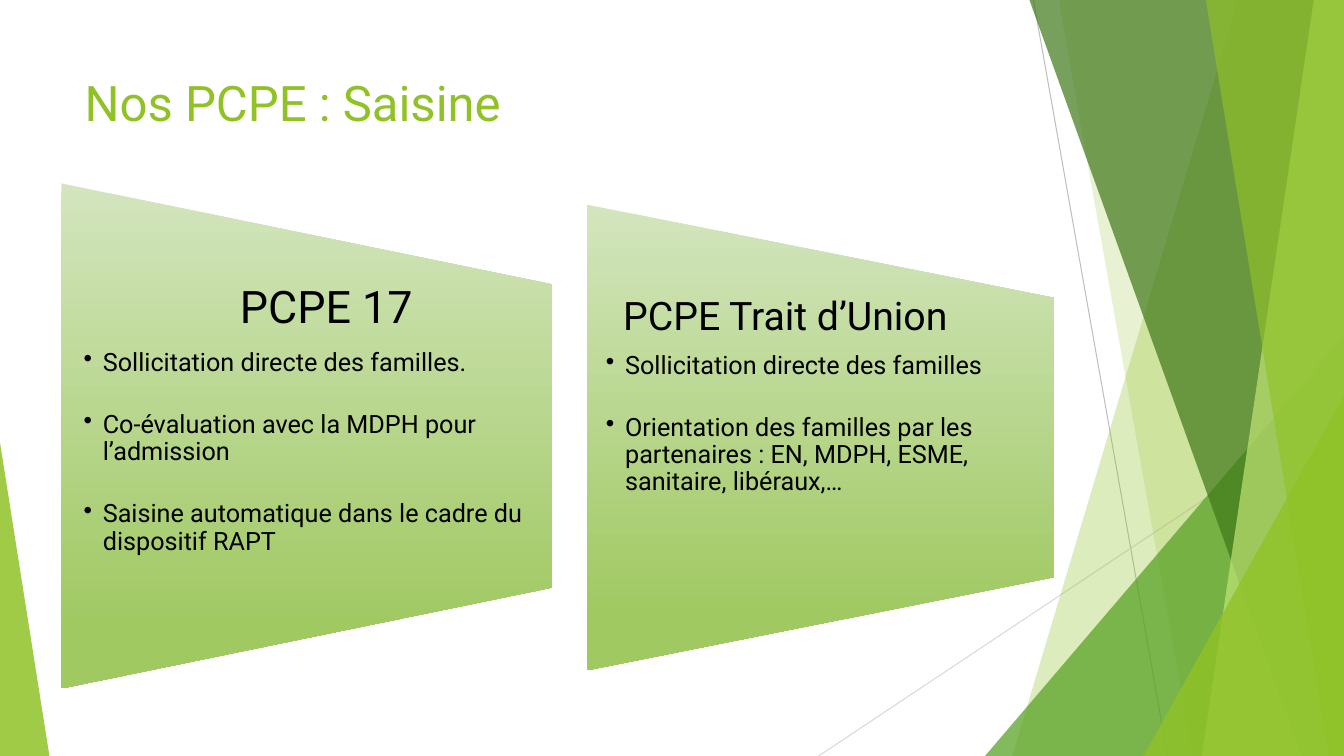
from lxml.etree import SubElement
from pptx import Presentation
from pptx.dml.color import RGBColor
from pptx.enum.shapes import MSO_CONNECTOR, MSO_SHAPE
from pptx.enum.text import MSO_ANCHOR, PP_ALIGN
from pptx.oxml.ns import qn
from pptx.util import Inches, Pt

FONT = "Roboto"
GREEN = "90C226"
WIDTH, HEIGHT = 13.33, 7.5
TITLE = "Nos PCPE : Saisine"

# Panels: place (left, top, width, height), text place, heading and bullets
PANELS = [
    {"panel": (0.61, 1.82, 4.87, 5.01), "text": (0.61, 2.83, 4.87, 3.01),
     "inset": 0.22, "heading": "PCPE 17", "size": 32, "indent": 1.55,
     "bullets": ["Sollicitation directe des familles.",
                 "Co-évaluation avec la MDPH pour l’admission",
                 "Saisine automatique dans le cadre du dispositif RAPT"]},
    {"panel": (5.82, 2.03, 4.63, 4.62), "text": (5.82, 2.94, 4.63, 2.77),
     "inset": 0.19, "heading": "PCPE Trait d’Union", "size": 28, "indent": 0.17,
     "bullets": ["Sollicitation directe des familles",
                 "Orientation des familles par les partenaires : EN, MDPH, "
                 "ESME, sanitaire, libéraux,…"]},
]
GRADIENT = [(0, "D3E5BE"), (88, "A0C962")]

# Decoration: lines, then facets from back to front
LINES = [((10.25, 0), (11.58, HEIGHT), "BFBFBF"),
         ((WIDTH, 4.03), (8.12, HEIGHT), "D9D9D9")]
# A band runs from its top x to its bottom x and fills to the right edge;
# a triangle has a place and the position of its apex.
FACETS = [
    ("band", (12.28, 10.04), GREEN, 30),
    ("band", (10.5, 11.83), GREEN, 20),
    ("triangle", (9.77, 3.33, 3.56, 4.17, 1), "54A021", 72),
    ("band", (10.21, 12.91), "3F7819", 70),
    ("band", (13.03, 11.92), "C0E474", 70),
    ("band", (11.96, 13.18), GREEN, 65),
    ("triangle", (11.34, 3.93, 1.99, 3.57, 1), GREEN, 80),
    ("triangle", (0, 4.39, 0.49, 3.11, 0), GREEN, 85),
]


def rgb(value):
    return RGBColor.from_string(value)


def inches(values):
    return [Inches(value) for value in values]


def apply(target, values):
    for name, value in values.items():
        setattr(target, name, value)


def plain(shape):
    shape.shadow.inherit = False
    shape.line.fill.background()


def add_line(page, start, end, color):
    line = page.shapes.add_connector(
        MSO_CONNECTOR.STRAIGHT, *inches(start + end))
    line.line.color.rgb = rgb(color)
    line.line.width = Pt(0.75)
    SubElement(line._element.spPr, qn("a:effectLst"))


def add_facet(page, kind, geometry, color, opacity):
    if kind == "band":
        top, bottom = geometry
        builder = page.shapes.build_freeform(Inches(top), 0)
        corners = [(WIDTH, 0), (WIDTH, HEIGHT), (bottom, HEIGHT)]
        builder.add_line_segments([inches(corner) for corner in corners])
        facet = builder.convert_to_shape()
    else:
        *place, apex = geometry
        facet = page.shapes.add_shape(
            MSO_SHAPE.ISOSCELES_TRIANGLE, *inches(place))
        facet.adjustments[0] = apex
    plain(facet)
    facet.fill.solid()
    facet.fill.fore_color.rgb = rgb(color)
    color_node = facet._element.spPr.find(qn("a:solidFill"))[0]
    SubElement(color_node, qn("a:alpha"), val=str(opacity * 1000))


def add_panel(page, place):
    # The shape is turned a quarter, so width and height trade places
    left, top, width, height = place
    shift = (width - height) / 2
    panel = page.shapes.add_shape(
        MSO_SHAPE.FLOWCHART_MANUAL_OPERATION,
        *inches((left + shift, top - shift, height, width)))
    panel.rotation = 270
    plain(panel)
    panel.fill.gradient()
    panel.fill.gradient_angle = 270
    for stop, (position, color) in zip(panel.fill.gradient_stops, GRADIENT):
        stop.position = position / 100
        stop.color.rgb = rgb(color)
    panel._element.spPr.find(qn("a:gradFill")).set("rotWithShape", "0")


def add_paragraph(para, text, size, after, indent, hanging=0):
    apply(para, {"alignment": PP_ALIGN.LEFT, "line_spacing": 0.9,
                 "space_before": Pt(0), "space_after": Pt(after)})
    span = para.add_run()
    span.text = text
    apply(span.font, {"name": FONT, "size": Pt(size)})
    span.font.color.rgb = rgb("000000")
    properties = para._p.get_or_add_pPr()
    properties.set("marL", str(Inches(indent)))
    properties.set("indent", str(Inches(-hanging)))
    if hanging:
        SubElement(properties, qn("a:buChar"), char="•")


def add_panel_text(page, content):
    box = page.shapes.add_textbox(*inches(content["text"]))
    frame = box.text_frame
    inset = Inches(content["inset"])
    apply(frame, {"word_wrap": True, "vertical_anchor": MSO_ANCHOR.TOP,
                  "margin_left": inset, "margin_right": inset,
                  "margin_top": 0, "margin_bottom": 0})
    size = content["size"]
    add_paragraph(frame.paragraphs[0], content["heading"], size,
                  round(size * 0.35, 1), content["indent"])
    for bullet in content["bullets"]:
        add_paragraph(frame.add_paragraph(), bullet, 18, 25, 0.19, 0.19)


deck = Presentation()
apply(deck, {"slide_width": Inches(WIDTH), "slide_height": Inches(HEIGHT)})
page = deck.slides.add_slide(deck.slide_layouts[5])

# Background decoration
for line in LINES:
    add_line(page, *line)
for facet in FACETS:
    add_facet(page, *facet)

# Title
title = page.shapes.title
apply(title, dict(zip(("left", "top", "width", "height"),
                      inches((0.74, 0.67, 9.4, 0.93)))))
title.text_frame.text = TITLE
title.text_frame.vertical_anchor = MSO_ANCHOR.TOP
para = title.text_frame.paragraphs[0]
para.alignment = PP_ALIGN.LEFT
font = para.runs[0].font
apply(font, {"name": FONT, "size": Pt(35)})
font.color.rgb = rgb(GREEN)

# Panels with their text
for content in PANELS:
    add_panel(page, content["panel"])
    add_panel_text(page, content)

deck.save("out.pptx")
